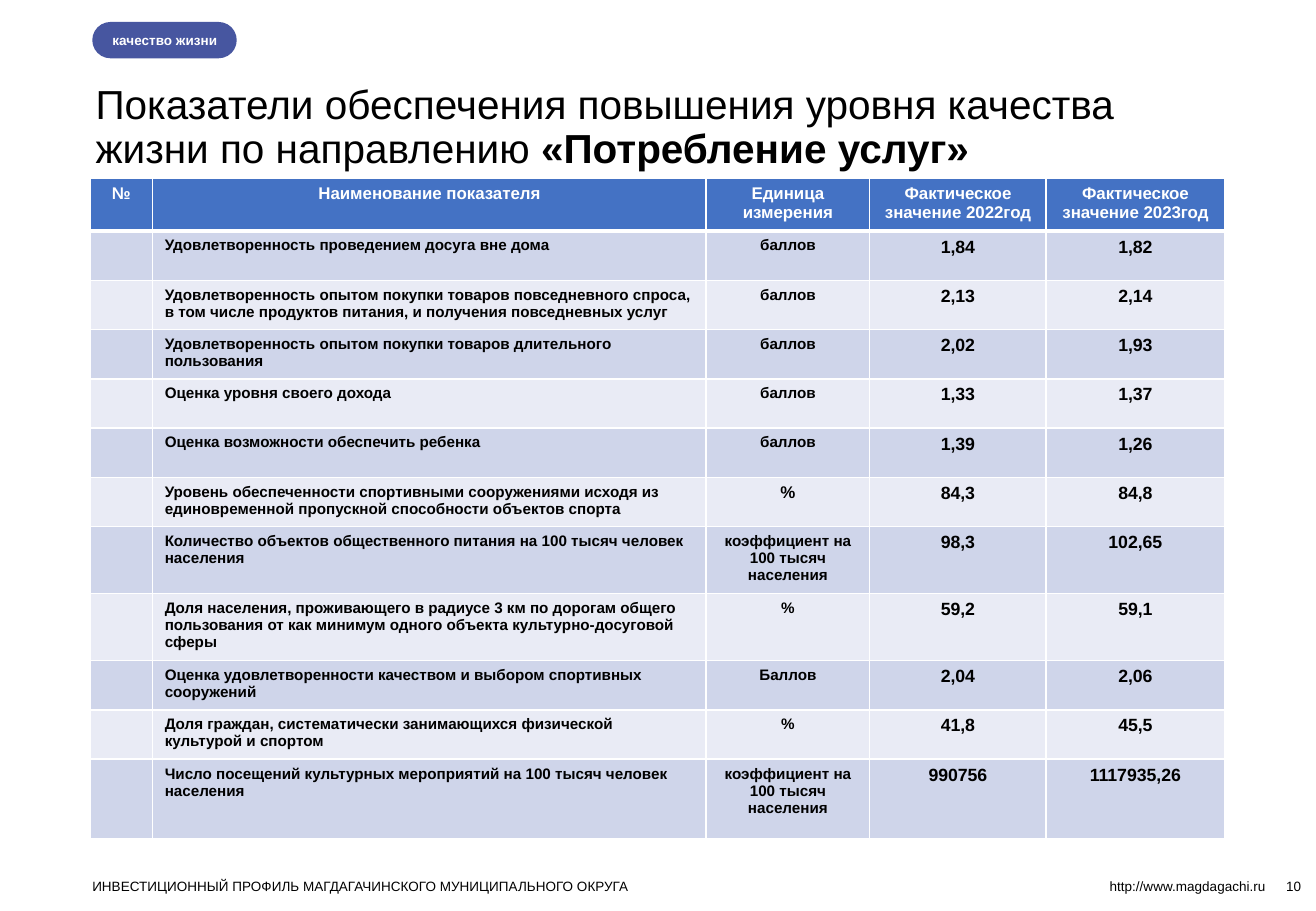
import pptx
import pptx.dml.color
import pptx.enum.shapes
import pptx.enum.text
import pptx.oxml
import pptx.oxml.ns
import pptx.util
from pptx.util import Cm

ALIGN = pptx.enum.text.PP_ALIGN
ANCHOR = pptx.enum.text.MSO_ANCHOR
FONT = "Arial"
BLACK, WHITE = "000000", "FFFFFF"
HEADER_FILL, BADGE_FILL = "4472C4", "4756A0"
BAND_FILLS = ("CFD5EA", "E9EBF5")

HEADERS = ("№", "Наименование показателя", "Единица измерения",
           "Фактическое значение 2022год", "Фактическое значение 2023год")
COLUMN_WIDTHS = (1.31, 11.57, 3.42, 3.69, 3.73)
ROW_HEIGHT, TALL_ROW_HEIGHT, LAST_ROW_HEIGHT = 1.03, 1.32, 1.67
TALL_ROWS = (7, 8)

# name, unit, value for 2022, value for 2023
INDICATORS = (
    ("Удовлетворенность проведением досуга вне дома", "баллов", "1,84", "1,82"),
    ("Удовлетворенность опытом покупки товаров повседневного спроса, в том числе "
     "продуктов питания, и получения повседневных услуг", "баллов", "2,13", "2,14"),
    ("Удовлетворенность опытом покупки товаров длительного пользования",
     "баллов", "2,02", "1,93"),
    ("Оценка уровня своего дохода", "баллов", "1,33", "1,37"),
    ("Оценка возможности обеспечить ребенка", "баллов", "1,39", "1,26"),
    ("Уровень обеспеченности спортивными сооружениями исходя из единовременной "
     "пропускной способности объектов спорта", "%", "84,3", "84,8"),
    ("Количество объектов общественного питания на 100 тысяч человек населения",
     "коэффициент на 100 тысяч населения", "98,3", "102,65"),
    ("Доля населения, проживающего в радиусе 3 км по дорогам общего пользования "
     "от как минимум одного объекта культурно-досуговой сферы", "%", "59,2", "59,1"),
    ("Оценка удовлетворенности качеством и выбором спортивных сооружений",
     "Баллов", "2,04", "2,06"),
    ("Доля граждан, систематически занимающихся физической культурой и спортом",
     "%", "41,8", "45,5"),
    ("Число посещений культурных мероприятий на 100 тысяч человек населения",
     "коэффициент на 100 тысяч населения", "990756", "1117935,26"),
)


def color(value):
    return pptx.dml.color.RGBColor.from_string(value)


def add_span(para, text, size, fill=BLACK, bold=False):
    span = para.add_run()
    span.text = text
    span.font.name = FONT
    span.font.size = pptx.util.Pt(size)
    span.font.bold = bold
    span.font.color.rgb = color(fill)


def set_frame(frame, left_inset=0, anchor=ANCHOR.TOP):
    frame.word_wrap = True
    frame.vertical_anchor = anchor
    frame.margin_left = Cm(left_inset)
    frame.margin_top = frame.margin_right = frame.margin_bottom = 0


def add_title(page):
    box = page.shapes.add_textbox(Cm(1.75), Cm(0.84), Cm(23.72), Cm(3.68))
    box.text_frame.word_wrap = True
    box.text_frame.vertical_anchor = ANCHOR.MIDDLE
    para = box.text_frame.paragraphs[0]
    para.line_spacing = 0.9
    add_span(para, "Показатели обеспечения повышения уровня качества жизни по направлению ", 24)
    add_span(para, "«Потребление услуг»", 24, bold=True)


def add_badge(page, text):
    badge = page.shapes.add_shape(pptx.enum.shapes.MSO_SHAPE.ROUNDED_RECTANGLE,
                                  Cm(1.93), Cm(0.46), Cm(3.02), Cm(0.76))
    badge.adjustments[0] = 0.5
    badge.shadow.inherit = False
    badge.fill.solid()
    badge.fill.fore_color.rgb = color(BADGE_FILL)
    badge.line.fill.background()
    set_frame(badge.text_frame, 0.41 - 0.1, ANCHOR.MIDDLE)
    para = badge.text_frame.paragraphs[0]
    para.alignment = ALIGN.LEFT
    add_span(para, text, 8, WHITE, bold=True)


def add_footer(page, text, left, width, alignment, anchor=ANCHOR.TOP):
    box = page.shapes.add_textbox(Cm(left), Cm(18.36), Cm(width), Cm(0.33))
    set_frame(box.text_frame, anchor=anchor)
    para = box.text_frame.paragraphs[0]
    para.alignment = alignment
    add_span(para, text, 8)


def set_borders(cell, **points):
    """Draw white borders of 1 pt, or of the width given for a side."""
    properties = cell._tc.get_or_add_tcPr()
    for place, side in enumerate("LRTB"):
        width = pptx.util.Pt(points.get(side, 1))
        properties.insert(place, pptx.oxml.parse_xml(
            f'<a:ln{side} {pptx.oxml.ns.nsdecls("a")} w="{width}"><a:solidFill>'
            f'<a:srgbClr val="{WHITE}"/></a:solidFill></a:ln{side}>'))


def fill_cell(cell, text, size, fill, font_fill, alignment):
    cell.fill.solid()
    cell.fill.fore_color.rgb = color(fill)
    if text:
        para = cell.text_frame.paragraphs[0]
        para.alignment = alignment
        add_span(para, text, size, font_fill, bold=True)


def row_height(row):
    if row == len(INDICATORS):
        return LAST_ROW_HEIGHT
    return TALL_ROW_HEIGHT if row in TALL_ROWS else ROW_HEIGHT


def add_indicator_table(page):
    heights = [row_height(row) for row in range(len(INDICATORS) + 1)]
    table = page.shapes.add_table(len(heights), len(HEADERS), Cm(1.88), Cm(3.73),
                                  Cm(sum(COLUMN_WIDTHS)), Cm(sum(heights))).table
    table.horz_banding = False
    for column, width in zip(table.columns, COLUMN_WIDTHS):
        column.width = Cm(width)
    for row, height in zip(table.rows, heights):
        row.height = Cm(height)

    # Header row
    for column, text in enumerate(HEADERS):
        cell = table.cell(0, column)
        fill_cell(cell, text, 10, HEADER_FILL, WHITE, ALIGN.CENTER)
        set_borders(cell, B=3)

    # Indicator rows, the number column stays empty
    for row, (name, unit, *values) in enumerate(INDICATORS, start=1):
        unit_size = 10 if row == 6 else 9
        sizes = (9, 9, unit_size, 10.5, 10.5)
        for column, text in enumerate(("", name, unit, *values)):
            cell = table.cell(row, column)
            fill_cell(cell, text, sizes[column], BAND_FILLS[(row - 1) % 2], BLACK,
                      ALIGN.LEFT if column == 1 else ALIGN.CENTER)
            set_borders(cell, T=3 if row == 1 else 1)


def main():
    deck = pptx.Presentation()
    deck.slide_width, deck.slide_height = Cm(27.51), Cm(19.05)
    page = deck.slides.add_slide(deck.slide_layouts[6])

    # Heading and table
    add_title(page)
    add_indicator_table(page)
    add_badge(page, "качество жизни")

    # Footer
    add_footer(page, "ИНВЕСТИЦИОННЫЙ ПРОФИЛЬ МАГДАГАЧИНСКОГО МУНИЦИПАЛЬНОГО ОКРУГА",
               1.93, 20.32, ALIGN.LEFT)
    add_footer(page, "http://www.magdagachi.ru", 22.07, 4.39, ALIGN.RIGHT)
    add_footer(page, "10", 25.17, 2.03, ALIGN.RIGHT, ANCHOR.BOTTOM)

    deck.save("out.pptx")


if __name__ == "__main__":
    main()
